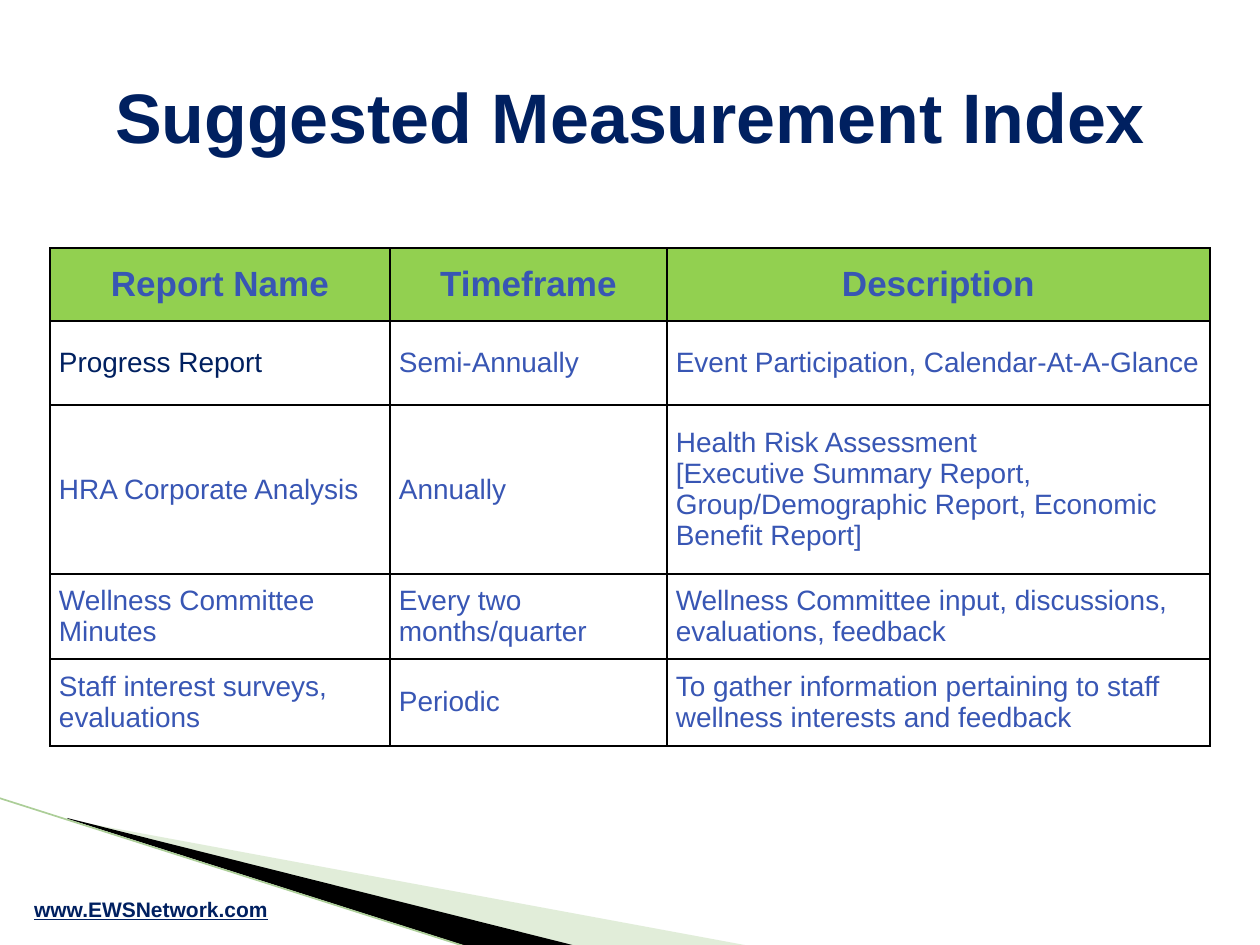
from lxml.etree import SubElement
from pptx import Presentation
from pptx.dml.color import RGBColor
from pptx.enum.shapes import MSO_CONNECTOR
from pptx.enum.text import MSO_ANCHOR, PP_ALIGN
from pptx.oxml.ns import qn
from pptx.util import Emu, Pt

NAVY = RGBColor(0x00, 0x20, 0x60)
BLUE = RGBColor(0x38, 0x56, 0xB4)
LIME = RGBColor(0x92, 0xD0, 0x50)
PALE_GREEN = RGBColor(0xB4, 0xD3, 0xA1)
LINE_GREEN = RGBColor(0xAC, 0xCE, 0x98)
BLACK = RGBColor(0x00, 0x00, 0x00)

PX = 914400 / 126
FONT = "Arial"

COLUMN_WIDTHS = [340, 277, 543]
ROW_HEIGHTS = [73, 84, 169, 85, 87]
ROWS = [
    ["Report Name", "Timeframe", "Description"],
    ["Progress Report", "Semi-Annually", "Event Participation, Calendar-At-A-Glance"],
    ["HRA Corporate Analysis", "Annually",
     "Health Risk Assessment\n"
     "[Executive Summary Report, Group/Demographic Report, Economic Benefit Report]"],
    ["Wellness Committee Minutes", "Every two months/quarter",
     "Wellness Committee input, discussions, evaluations, feedback"],
    ["Staff interest surveys, evaluations", "Periodic",
     "To gather information pertaining to staff wellness interests and feedback"],
]


def px(length):
    return Emu(round(length * PX))


class SlideBuilder:
    def __init__(self, slide):
        self.slide = slide
        self.shapes = slide.shapes

    def set_text(self, frame, text, size, color, bold=False, align=PP_ALIGN.LEFT, underline=None):
        frame.word_wrap = True
        frame.text = text
        for paragraph in frame.paragraphs:
            paragraph.alignment = align
            font = paragraph.font
            font.name, font.size, font.bold = FONT, Pt(size), bold
            font.underline = underline
            font.color.rgb = color

    def title(self, text, left, top, width, height):
        shape = self.shapes.title
        shape.left, shape.top, shape.width, shape.height = map(px, (left, top, width, height))
        shape.text_frame.vertical_anchor = MSO_ANCHOR.MIDDLE
        self.set_text(shape.text_frame, text, 40, NAVY, True, PP_ALIGN.CENTER)

    def footer(self, text, left, top, width, height):
        shape = self.shapes.add_textbox(*map(px, (left, top, width, height)))
        self.set_text(shape.text_frame, text, 12, NAVY, True, PP_ALIGN.CENTER, True)

    def polygon(self, points, color, opacity=100):
        builder = self.shapes.build_freeform(*points[0], scale=PX)
        builder.add_line_segments(points[1:], close=True)
        shape = builder.convert_to_shape()
        shape.shadow.inherit = False
        shape.line.fill.background()
        shape.fill.solid()
        shape.fill.fore_color.rgb = color
        if opacity < 100:
            color_element = shape._element.spPr.find(".//" + qn("a:srgbClr"))
            SubElement(color_element, qn("a:alpha"), val=str(opacity * 1000))

    def line(self, start, end, color, width):
        connector = self.shapes.add_connector(MSO_CONNECTOR.STRAIGHT, *map(px, start + end))
        connector.line.color.rgb = color
        connector.line.width = Pt(width)
        SubElement(connector._element.spPr, qn("a:effectLst"))

    def cell_borders(self, cell):
        properties = cell._tc.get_or_add_tcPr()
        for position, side in enumerate(("lnL", "lnR", "lnT", "lnB")):
            border = SubElement(properties, qn("a:" + side), w=str(int(Pt(1))))
            fill = SubElement(border, qn("a:solidFill"))
            SubElement(fill, qn("a:srgbClr"), val=str(BLACK))
            properties.insert(position, border)

    def table(self, rows, left, top, widths, heights):
        table = self.shapes.add_table(
            len(rows), len(widths), *map(px, (left, top, sum(widths), sum(heights)))
        ).table
        table.horz_banding = False
        for column, width in zip(table.columns, widths):
            column.width = px(width)
        for row_index, (row, height) in enumerate(zip(rows, heights)):
            table.rows[row_index].height = px(height)
            for column_index, text in enumerate(row):
                cell = table.cell(row_index, column_index)
                cell.vertical_anchor = MSO_ANCHOR.MIDDLE
                cell.margin_left = cell.margin_right = px(9)
                cell.margin_top = cell.margin_bottom = 0
                if row_index == 0:
                    cell.fill.solid()
                    cell.fill.fore_color.rgb = LIME
                    self.set_text(cell.text_frame, text, 20, BLUE, True, PP_ALIGN.CENTER)
                else:
                    cell.fill.background()
                    color = NAVY if (row_index, column_index) == (1, 0) else BLUE
                    self.set_text(cell.text_frame, text, 16, color)
                self.cell_borders(cell)


def main():
    presentation = Presentation()
    presentation.slide_width, presentation.slide_height = px(1260), px(945)
    slide = presentation.slides.add_slide(presentation.slide_layouts[5])
    builder = SlideBuilder(slide)
    builder.polygon([(69, 820), (750, 946), (575, 946), (69, 819)], PALE_GREEN, 40)
    builder.polygon([(67, 818), (576, 946), (469, 947), (68, 819)], BLACK)
    builder.line((-1, 798), (467, 947), LINE_GREEN, 0.95)
    builder.table(ROWS, 50, 248, COLUMN_WIDTHS, ROW_HEIGHTS)
    builder.title("Suggested Measurement Index", 0, 37, 1260, 157)
    builder.footer("www.EWSNetwork.com", 0, 890, 302, 38)
    presentation.save("out.pptx")


if __name__ == "__main__":
    main()
